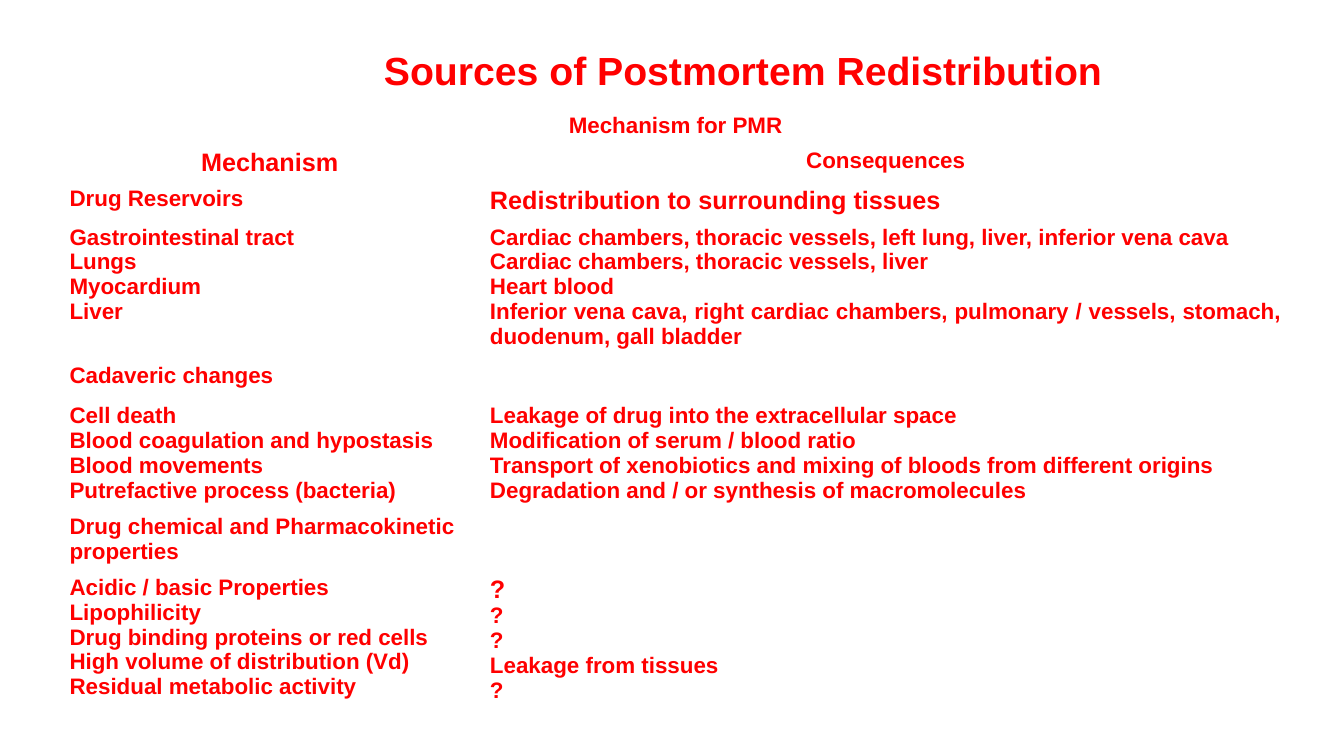
from pptx import Presentation
from pptx import util as u
from pptx.dml.color import RGBColor
from pptx.enum import text

COLORS = {"text": "FF0000"}
FONT = "Arial"
BODY, LARGE, TITLE = 16, 18, 28
LEFT, CENTER, JUSTIFY = text.PP_ALIGN.LEFT, text.PP_ALIGN.CENTER, text.PP_ALIGN.JUSTIFY

COLUMN_WIDTHS = [4.17, 8.05]

# Each row: height, then mechanism and consequence cells as (alignment, lines);
# a line is a string in body size or a (string, size) pair
ROWS = [
    (0.35, (CENTER, ["Mechanism for PMR"]), None),
    (0.38, (CENTER, [("Mechanism", LARGE)]), (CENTER, ["Consequences"])),
    (0.38, (LEFT, ["Drug Reservoirs"]),
     (LEFT, [("Redistribution to surrounding tissues", LARGE)])),
    (1.37, (LEFT, ["Gastrointestinal tract", "Lungs", "Myocardium", "Liver"]),
     (JUSTIFY, [
         "Cardiac chambers, thoracic vessels, left lung, liver, inferior vena cava",
         "Cardiac chambers, thoracic vessels, liver",
         "Heart blood",
         "Inferior vena cava, right cardiac chambers, pulmonary / vessels, stomach, "
         "duodenum, gall bladder"])),
    (0.37, (LEFT, ["Cadaveric changes"]), None),
    (1.1, (LEFT, ["Cell death", "Blood coagulation and hypostasis",
                  "Blood movements", "Putrefactive process (bacteria)"]),
     (LEFT, ["Leakage of drug into the extracellular space",
             "Modification of serum / blood ratio",
             "Transport of xenobiotics and mixing of bloods from different origins",
             "Degradation and / or synthesis of macromolecules"])),
    (0.6, (LEFT, ["Drug chemical and Pharmacokinetic properties"]), None),
    (1.37, (LEFT, ["Acidic / basic Properties", "Lipophilicity",
                   "Drug binding proteins or red cells",
                   "High volume of distribution (Vd)", "Residual metabolic activity"]),
     (LEFT, [("?", LARGE), "?", "?", "Leakage from tissues", "?"])),
]


def add_text(paragraph, words, size, alignment=LEFT):
    paragraph.alignment = alignment
    run = paragraph.add_run()
    run.text = words
    run.font.name = FONT
    run.font.size = u.Pt(size)
    run.font.bold = True
    run.font.color.rgb = RGBColor.from_string(COLORS["text"])


def fill_cell(cell, content):
    cell.fill.background()
    if content is None:
        return
    alignment, lines = content
    frame = cell.text_frame
    for index, line in enumerate(lines):
        words, size = (line, BODY) if isinstance(line, str) else line
        paragraph = frame.add_paragraph() if index else frame.paragraphs[0]
        add_text(paragraph, words, size, alignment)


def add_title(slide, left, top, width, height):
    box = slide.shapes.add_textbox(*map(u.Inches, (left, top, width, height)))
    frame = box.text_frame
    frame.word_wrap = False
    frame.auto_size = text.MSO_AUTO_SIZE.SHAPE_TO_FIT_TEXT
    add_text(frame.paragraphs[0], "Sources of Postmortem Redistribution", TITLE)


def add_mechanism_table(slide, left, top):
    width, height = sum(COLUMN_WIDTHS), sum(row[0] for row in ROWS)
    table = slide.shapes.add_table(
        len(ROWS), len(COLUMN_WIDTHS),
        *map(u.Inches, (left, top, width, height))).table
    table.first_row = table.horz_banding = False
    for column, column_width in zip(table.columns, COLUMN_WIDTHS):
        column.width = u.Inches(column_width)
    # Heading row spans both columns
    table.cell(0, 0).merge(table.cell(0, 1))
    for row, (row_height, *contents) in zip(table.rows, ROWS):
        row.height = u.Inches(row_height)
        for cell, content in zip(row.cells, contents):
            fill_cell(cell, content)


def main():
    presentation = Presentation()
    presentation.slide_width = u.Inches(13.33)
    presentation.slide_height = u.Inches(7.5)
    slide = presentation.slides.add_slide(presentation.slide_layouts[6])
    add_mechanism_table(slide, 0.59, 1.07)
    add_title(slide, 3.71, 0.41, 7.41, 0.57)
    presentation.save("out.pptx")


if __name__ == "__main__":
    main()
